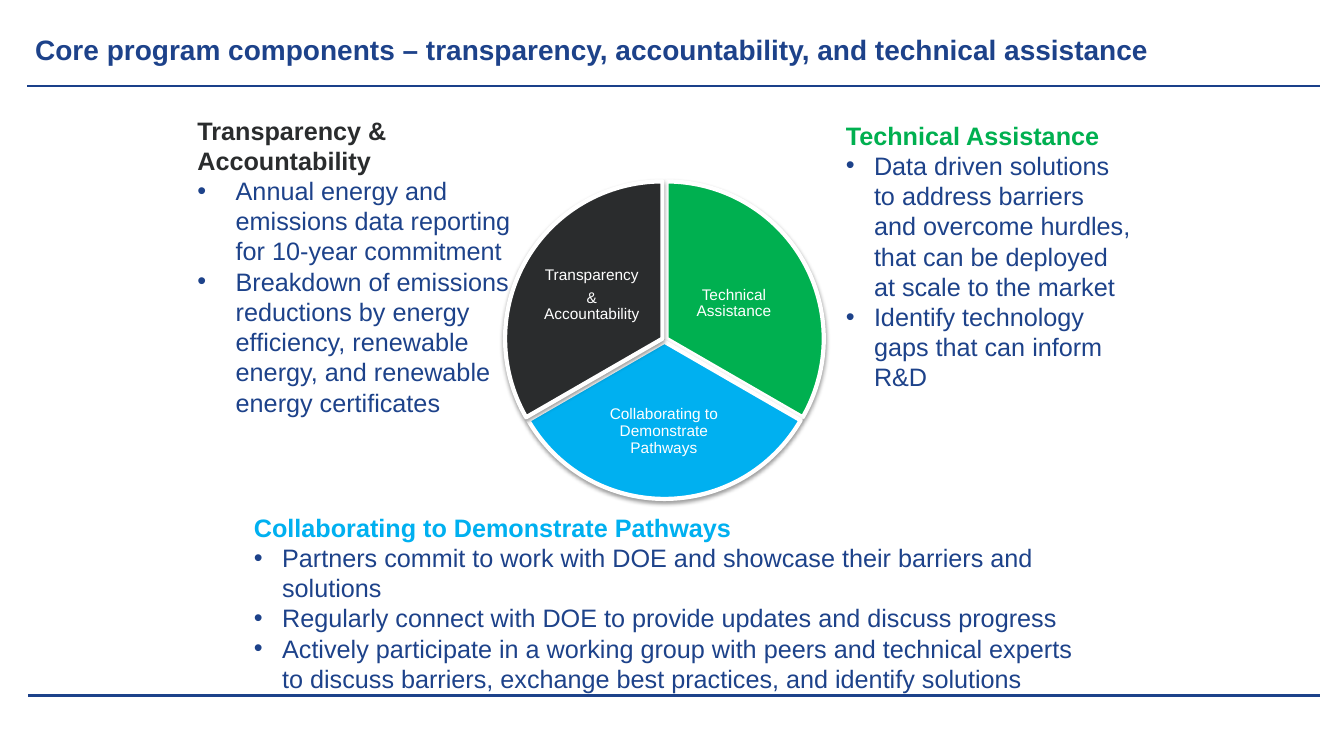
"""Build the slide on the three core program components."""
from dataclasses import dataclass

from lxml import etree
from pptx import Presentation
from pptx.dml.color import RGBColor
from pptx.enum.shapes import MSO_CONNECTOR, MSO_SHAPE
from pptx.enum.text import MSO_ANCHOR, PP_ALIGN
from pptx.oxml.ns import qn
from pptx.util import Inches, Pt

LINE = MSO_CONNECTOR.STRAIGHT
PIE = MSO_SHAPE.PIE
MIDDLE = MSO_ANCHOR.MIDDLE
CENTER = PP_ALIGN.CENTER
FONT = "Arial"
COLORS = {
    "navy": "1D428A",
    "rule": "1A408A",
    "green": "00B050",
    "blue": "00B0F0",
    "dark": "2A2C2D",
    "white": "FFFFFF",
    "black": "000000",
}
Box = tuple[float, float, float, float]


@dataclass
class Slice:
    color: str
    left: float
    top: float
    start: int
    label: Box
    lines: list[str]


@dataclass
class Block:
    color: str
    box: Box
    indent: float
    head: str
    items: list[str]


SIZE = 3.12
SWEEP = 120
SLICES = [
    Slice("green", 5.05, 1.8, 270, (6.75, 2.49, 1.06, 1.04),
          ["Technical Assistance"]),
    Slice("blue", 5.03, 1.83, 30, (5.88, 3.8, 1.41, 0.96),
          ["Collaborating to Demonstrate Pathways"]),
    Slice("dark", 5.01, 1.8, 150, (5.34, 2.41, 1.06, 1.04),
          ["Transparency", "& Accountability"]),
]
BLOCKS = [
    Block("blue", (2.42, 5.03, 8.5, 1.92), 0.28,
          "Collaborating to Demonstrate Pathways", [
              "Partners commit to work with DOE and showcase their barriers and solutions",
              "Regularly connect with DOE to provide updates and discuss progress",
              "Actively participate in a working group with peers and technical experts "
              "to discuss barriers, exchange best practices, and identify solutions",
          ]),
    Block("dark", (1.86, 1.09, 3.5, 3.13), 0.38,
          "Transparency & Accountability", [
              "Annual energy and emissions data reporting for 10-year commitment",
              "Breakdown of emissions reductions by energy efficiency, renewable "
              "energy, and renewable energy certificates",
          ]),
    Block("green", (8.29, 1.14, 3.02, 3.13), 0.28,
          "Technical Assistance", [
              "Data driven solutions to address barriers and overcome hurdles, "
              "that can be deployed at scale to the market",
              "Identify technology gaps that can inform R&D",
          ]),
]


def tint(name: str) -> RGBColor:
    return RGBColor.from_string(COLORS[name])


def add_text(slide, box: Box, lines: list[str], size: int, color: str, bold=False):
    frame = slide.shapes.add_textbox(*map(Inches, box)).text_frame
    frame.word_wrap = True
    frame.text = "\n".join(lines)
    for para in frame.paragraphs:
        for run in para.runs:
            style(run.font, size, color, bold)
    return frame


def style(font, size: int, color: str, bold: bool) -> None:
    font.name, font.size, font.bold = FONT, Pt(size), bold
    font.color.rgb = tint(color)


def add_rule(slide, left: float, top: float, color: str) -> None:
    rule = slide.shapes.add_connector(
        LINE, Inches(left), Inches(top), Inches(13.09), Inches(top))
    rule.line.color.rgb = tint(color)
    rule.line.width = Pt(1.5)
    etree.SubElement(rule._element.spPr, qn("a:effectLst"))


def add_shadow(shape) -> None:
    shape.shadow.inherit = False
    effects = shape._element.spPr.find(qn("a:effectLst"))
    outer = etree.SubElement(
        effects, qn("a:outerShdw"), blurRad=str(Pt(3.1)), dist=str(Pt(1.6)),
        dir="5400000", rotWithShape="0")
    shade = etree.SubElement(outer, qn("a:srgbClr"), val=COLORS["black"])
    etree.SubElement(shade, qn("a:alpha"), val="38000")


def add_slice(slide, part: Slice) -> None:
    wedge = slide.shapes.add_shape(
        PIE, *map(Inches, (part.left, part.top, SIZE, SIZE)))
    ends = (part.start, (part.start + SWEEP) % 360)
    for index, angle in enumerate(ends):
        wedge.adjustments[index] = angle * 0.6
    wedge.fill.solid()
    wedge.fill.fore_color.rgb = tint(part.color)
    wedge.line.color.rgb = tint("white")
    wedge.line.width = Pt(3)
    add_shadow(wedge)

    frame = add_text(slide, part.label, part.lines, 11, "white")
    frame.vertical_anchor = MIDDLE
    frame.margin_left = frame.margin_right = Inches(0.02)
    frame.margin_top = frame.margin_bottom = Inches(0.02)
    for para in frame.paragraphs:
        para.alignment = CENTER
        para.line_spacing = 0.9
        para.space_after = Pt(4)


def add_block(slide, block: Block) -> None:
    frame = add_text(slide, block.box, [block.head, *block.items], 18, "navy")
    head, *items = frame.paragraphs
    style(head.runs[0].font, 18, block.color, True)
    for para in items:
        props = para._p.get_or_add_pPr()
        props.set("marL", str(Inches(block.indent)))
        props.set("indent", str(-Inches(block.indent)))
        etree.SubElement(props, qn("a:buFont"), typeface=FONT)
        etree.SubElement(props, qn("a:buChar"), char="•")


def main() -> None:
    deck = Presentation()
    deck.slide_width, deck.slide_height = Inches(13.33), Inches(7.5)
    slide = deck.slides.add_slide(deck.slide_layouts[6])
    add_rule(slide, 0.28, 6.9, "navy")
    add_rule(slide, 0.27, 0.85, "rule")
    for part in SLICES:
        add_slice(slide, part)
    for block in BLOCKS:
        add_block(slide, block)
    title = add_text(slide, (0.25, 0.16, 12.61, 0.66), [
        "Core program components – transparency, accountability, "
        "and technical assistance"], 20, "navy", True)
    title.vertical_anchor = MIDDLE
    deck.save("out.pptx")


if __name__ == "__main__":
    main()
